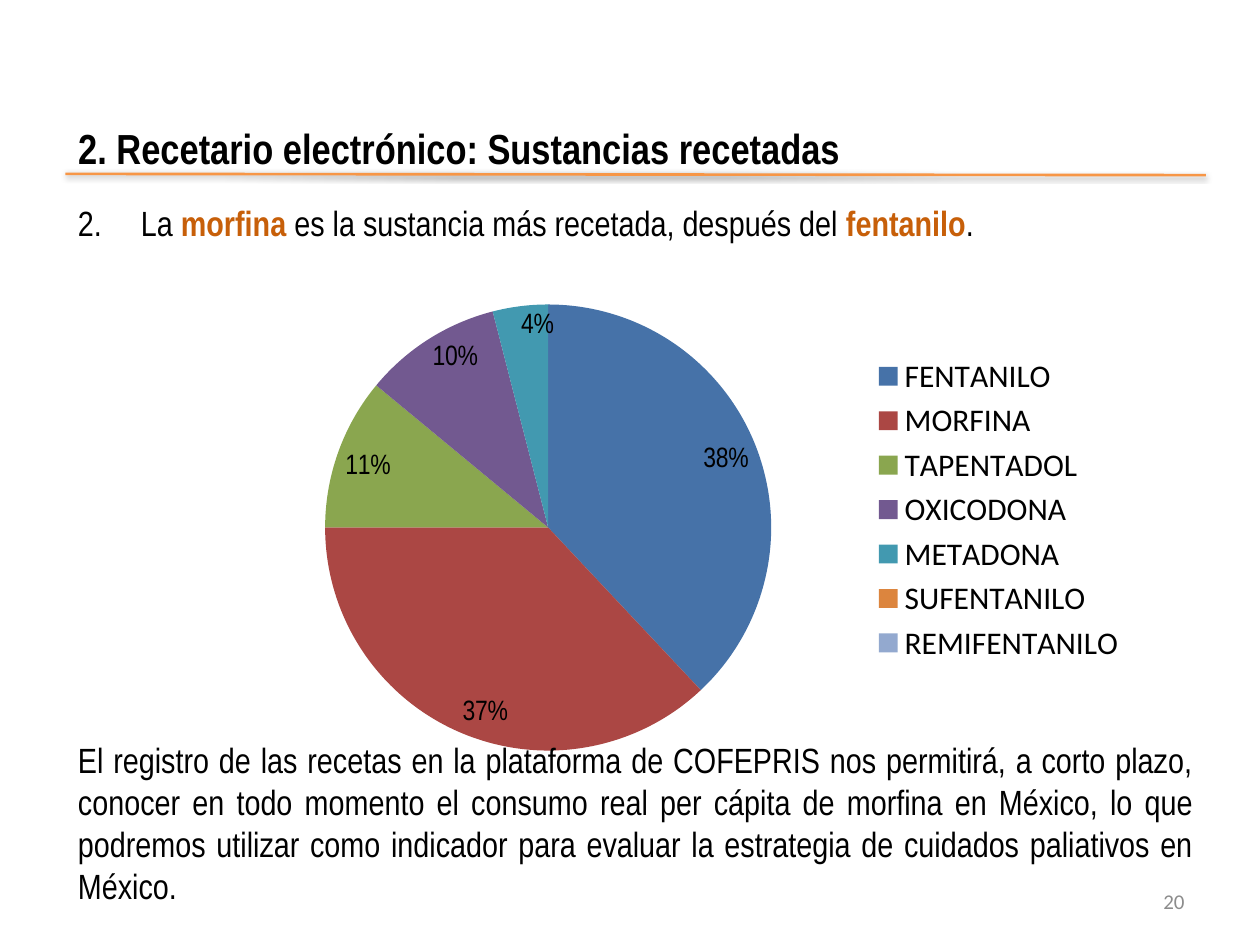
from lxml import etree
from pptx import Presentation
from pptx.chart.data import CategoryChartData
from pptx.dml.color import RGBColor
from pptx.enum.chart import XL_CHART_TYPE, XL_LABEL_POSITION, XL_LEGEND_POSITION
from pptx.enum.shapes import MSO_CONNECTOR
from pptx.enum.text import MSO_ANCHOR, MSO_AUTO_SIZE, PP_ALIGN
from pptx.oxml import parse_xml
from pptx.oxml.ns import nsdecls, qn
from pptx.util import Inches, Pt

PIE = XL_CHART_TYPE.PIE
INSIDE_END, OUTSIDE_END = XL_LABEL_POSITION.INSIDE_END, XL_LABEL_POSITION.OUTSIDE_END
LEFT, RIGHT, JUSTIFY = PP_ALIGN.LEFT, PP_ALIGN.RIGHT, PP_ALIGN.JUSTIFY
TOP, MIDDLE = MSO_ANCHOR.TOP, MSO_ANCHOR.MIDDLE

BLACK = RGBColor(0x00, 0x00, 0x00)
GRAY = RGBColor(0x8C, 0x8C, 0x8C)
ORANGE = RGBColor(0xF7, 0x96, 0x46)
DARK_ORANGE = RGBColor(0xC7, 0x5F, 0x09)
NARROW, SANS = "Arial Narrow", "Calibri"

TITLE = "2. Recetario electrónico: Sustancias recetadas"
# Words between asterisks are highlighted.
FINDING = "La *morfina* es la sustancia más recetada, después del *fentanilo*."
CONCLUSION = (
    "El registro de las recetas en la plataforma de COFEPRIS nos permitirá, a corto plazo, "
    "conocer en todo momento el consumo real per cápita de morfina en México, lo que "
    "podremos utilizar como indicador para evaluar la estrategia de cuidados paliativos "
    "en México."
)
PAGE_NUMBER = "20"
SUBSTANCES = [
    ("FENTANILO", 38, RGBColor(0x46, 0x72, 0xA8)),
    ("MORFINA", 37, RGBColor(0xAB, 0x47, 0x44)),
    ("TAPENTADOL", 11, RGBColor(0x8A, 0xA6, 0x4F)),
    ("OXICODONA", 10, RGBColor(0x72, 0x59, 0x90)),
    ("METADONA", 4, RGBColor(0x42, 0x99, 0xB0)),
    ("SUFENTANILO", 0, RGBColor(0xDC, 0x85, 0x3E)),
    ("REMIFENTANILO", 0, RGBColor(0x93, 0xA9, 0xCF)),
]
ZERO_LABEL_SHIFTS = {5: -0.03, 6: 0.03}
MARGIN, TEXT_WIDTH = 0.52, 9.05


def set_font(font, size, name=NARROW, color=BLACK, bold=False):
    font.size, font.name, font.bold = Pt(size), name, bold
    font.color.rgb = color


def write(shape, text, size=20, name=NARROW, color=BLACK, bold=False,
          align=LEFT, anchor=TOP, after=0, number=None):
    frame = shape.text_frame
    frame.word_wrap = True
    frame.auto_size = MSO_AUTO_SIZE.NONE
    frame.vertical_anchor = anchor
    paragraph = frame.paragraphs[0]
    paragraph.alignment = align
    paragraph.space_after = Pt(after)
    if number:
        properties = paragraph._p.get_or_add_pPr()
        properties.set("marL", str(Inches(0.5)))
        properties.set("indent", str(-Inches(0.5)))
        etree.SubElement(properties, qn("a:buFont"), typeface="+mj-lt")
        etree.SubElement(properties, qn("a:buAutoNum"), type="arabicPeriod",
                         startAt=str(number))
    for i, part in enumerate(text.split("*")):
        highlighted = i % 2 == 1
        run = paragraph.add_run()
        run.text = part
        set_font(run.font, size, name, DARK_ORANGE if highlighted else color,
                 bold or highlighted)


def add_text(slide, text, left, top, width, height, **text_format):
    box = slide.shapes.add_textbox(Inches(left), Inches(top), Inches(width), Inches(height))
    write(box, text, **text_format)


def layout_xml(inner=False, **values):
    """Return a manual chart layout; values are fractions of the chart."""
    head = ('<c:layoutTarget val="inner"/><c:xMode val="edge"/><c:yMode val="edge"/>'
            if inner else "")
    body = "".join(f'<c:{key} val="{value}"/>' for key, value in values.items())
    return parse_xml(f'<c:layout {nsdecls("c")}><c:manualLayout>{head}{body}'
                     '</c:manualLayout></c:layout>')


def add_title_rule(slide):
    rule = slide.shapes.add_connector(MSO_CONNECTOR.STRAIGHT, Inches(MARGIN), Inches(1.38),
                                      Inches(MARGIN + TEXT_WIDTH), Inches(1.39))
    rule.line.color.rgb = ORANGE
    rule.line.width = Pt(1.5)
    rule._element.spPr.append(parse_xml(
        f'<a:effectLst {nsdecls("a")}><a:outerShdw blurRad="{Pt(3.1)}" dist="{Pt(1)}" '
        'dir="5400000" rotWithShape="0"><a:srgbClr val="000000"><a:alpha val="38000"/>'
        '</a:srgbClr></a:outerShdw></a:effectLst>'))


def add_substance_chart(slide):
    data = CategoryChartData()
    data.categories = [name for name, _, _ in SUBSTANCES]
    data.add_series("Series 1", [share for _, share, _ in SUBSTANCES])
    chart = slide.shapes.add_chart(PIE, Inches(1.77), Inches(2.01),
                                   Inches(7.27), Inches(4.07), data).chart
    set_font(chart.font, 10, SANS)
    chart.has_title = False
    chart.has_legend = True
    chart.legend.position = XL_LEGEND_POSITION.RIGHT
    chart.legend.include_in_layout = False
    set_font(chart.legend.font, 18, SANS)

    plot = chart.plots[0]
    plot.vary_by_categories = True
    plot_area = chart._chartSpace.chart.plotArea
    for old in plot_area.findall(qn("c:layout")):
        plot_area.remove(old)
    plot_area.insert(0, layout_xml(inner=True, x=0.11, y=0.1, w=0.49, h=0.87))

    series = plot.series[0]
    labels = series.data_labels
    labels.show_value = False
    labels.show_percentage = True
    labels.position = INSIDE_END
    set_font(labels.font, 16)
    for i, (_, _, color) in enumerate(SUBSTANCES):
        fill = series.points[i].format.fill
        fill.solid()
        fill.fore_color.rgb = color

    for i, shift in ZERO_LABEL_SHIFTS.items():
        label = series.points[i].data_label
        set_font(label.font, 16)
        label.position = OUTSIDE_END
        element = label._get_or_add_dLbl()
        element.find(qn("c:showVal")).set("val", "0")
        element.find(qn("c:showPercent")).set("val", "1")
        element.find(qn("c:idx")).addnext(layout_xml(x=shift, y=-0.02))


def main():
    presentation = Presentation()
    presentation.slide_width, presentation.slide_height = Inches(10), Inches(7.5)
    slide = presentation.slides.add_slide(presentation.slide_layouts[5])

    add_text(slide, PAGE_NUMBER, 7.17, 6.95, 2.33, 0.4, size=12, name=SANS, color=GRAY,
             align=RIGHT, anchor=MIDDLE)
    add_title_rule(slide)
    title = slide.shapes.title
    title.left, title.top = Inches(MARGIN), Inches(0.92)
    title.width, title.height = Inches(8.9), Inches(0.45)
    write(title, TITLE, size=24, bold=True)
    add_text(slide, FINDING, MARGIN, 1.55, TEXT_WIDTH, 0.44, align=JUSTIFY, after=12, number=2)
    add_substance_chart(slide)
    add_text(slide, CONCLUSION, MARGIN, 5.81, TEXT_WIDTH, 1.45, align=JUSTIFY, after=12)
    presentation.save("out.pptx")


if __name__ == "__main__":
    main()
